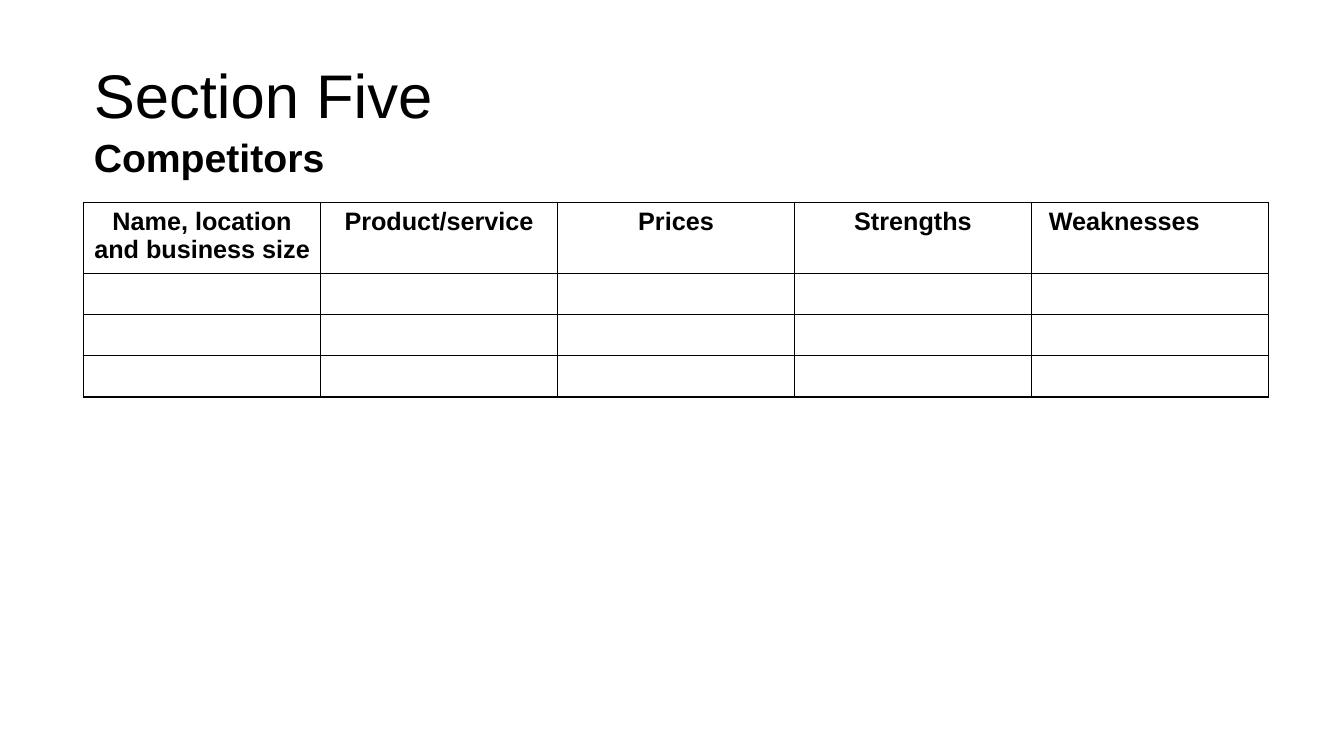
from dataclasses import dataclass

from lxml.etree import SubElement
from pptx import Presentation
from pptx.dml.color import RGBColor
from pptx.enum.text import MSO_ANCHOR, PP_ALIGN
from pptx.oxml.ns import qn
from pptx.slide import Slide
from pptx.table import _Cell
from pptx.text.text import _Paragraph
from pptx.util import Inches, Pt

BLACK = RGBColor(0x00, 0x00, 0x00)
FONT = "Arial"

# Grid, in inches
LEFT = 0.83
COLUMN = 2.35
TABLE_TOP = 2.01
HEADING_ROW = 0.7
ENTRY_ROW = 0.41
ENTRY_COUNT = 3


@dataclass(frozen=True)
class Heading:
    lines: tuple[str, ...]
    right_margin: float = 0.1


HEADINGS = (
    Heading(("Name, location", "and business size")),
    Heading(("Product/service",)),
    Heading(("Prices",)),
    Heading(("Strengths",)),
    Heading(("Weaknesses",), right_margin=0.61),
)


def add_run(paragraph: _Paragraph, text: str, size: float, bold: bool) -> None:
    run = paragraph.add_run()
    run.text = text
    run.font.name = FONT
    run.font.size = Pt(size)
    run.font.bold = bold
    run.font.color.rgb = BLACK


def add_title(slide: Slide) -> None:
    title = slide.shapes.title
    title.left, title.top = Inches(LEFT), Inches(0.53)
    title.width, title.height = Inches(6.67), Inches(1.31)
    frame = title.text_frame
    frame.word_wrap = True
    frame.vertical_anchor = MSO_ANCHOR.BOTTOM

    section = frame.paragraphs[0]
    topic = frame.add_paragraph()
    topic.space_before = Pt(2)
    for paragraph, text, size, bold in (
        (section, "Section Five", 44, False),
        (topic, "Competitors", 28, True),
    ):
        paragraph.alignment = PP_ALIGN.LEFT
        add_run(paragraph, text, size, bold)


def outline_cell(cell: _Cell) -> None:
    properties = cell._tc.get_or_add_tcPr()
    for side in ("a:lnL", "a:lnR", "a:lnT", "a:lnB"):
        line = SubElement(properties, qn(side), w=str(Pt(1)))
        fill = SubElement(line, qn("a:solidFill"))
        SubElement(fill, qn("a:srgbClr"), val=str(BLACK))


def fill_heading(cell: _Cell, heading: Heading) -> None:
    cell.margin_right = Inches(heading.right_margin)
    frame = cell.text_frame
    for index, text in enumerate(heading.lines):
        paragraph = frame.add_paragraph() if index else frame.paragraphs[0]
        paragraph.alignment = PP_ALIGN.CENTER
        add_run(paragraph, text, 18, True)


def add_competitors(slide: Slide) -> None:
    heights = [HEADING_ROW] + [ENTRY_ROW] * ENTRY_COUNT
    competitors = slide.shapes.add_table(
        len(heights), len(HEADINGS), Inches(LEFT), Inches(TABLE_TOP),
        Inches(COLUMN * len(HEADINGS)), Inches(sum(heights)),
    ).table
    competitors.first_row = False
    competitors.horz_banding = False
    for column in competitors.columns:
        column.width = Inches(COLUMN)
    for row, height in zip(competitors.rows, heights):
        row.height = Inches(height)

    # Borders go in before the fill, as the schema orders them
    for cell in competitors.iter_cells():
        outline_cell(cell)
        cell.fill.background()
    for column, heading in enumerate(HEADINGS):
        fill_heading(competitors.cell(0, column), heading)


def main() -> None:
    deck = Presentation()
    deck.slide_width, deck.slide_height = Inches(13.33), Inches(7.5)
    slide = deck.slides.add_slide(deck.slide_layouts[5])
    add_title(slide)
    add_competitors(slide)
    deck.save("out.pptx")


if __name__ == "__main__":
    main()
